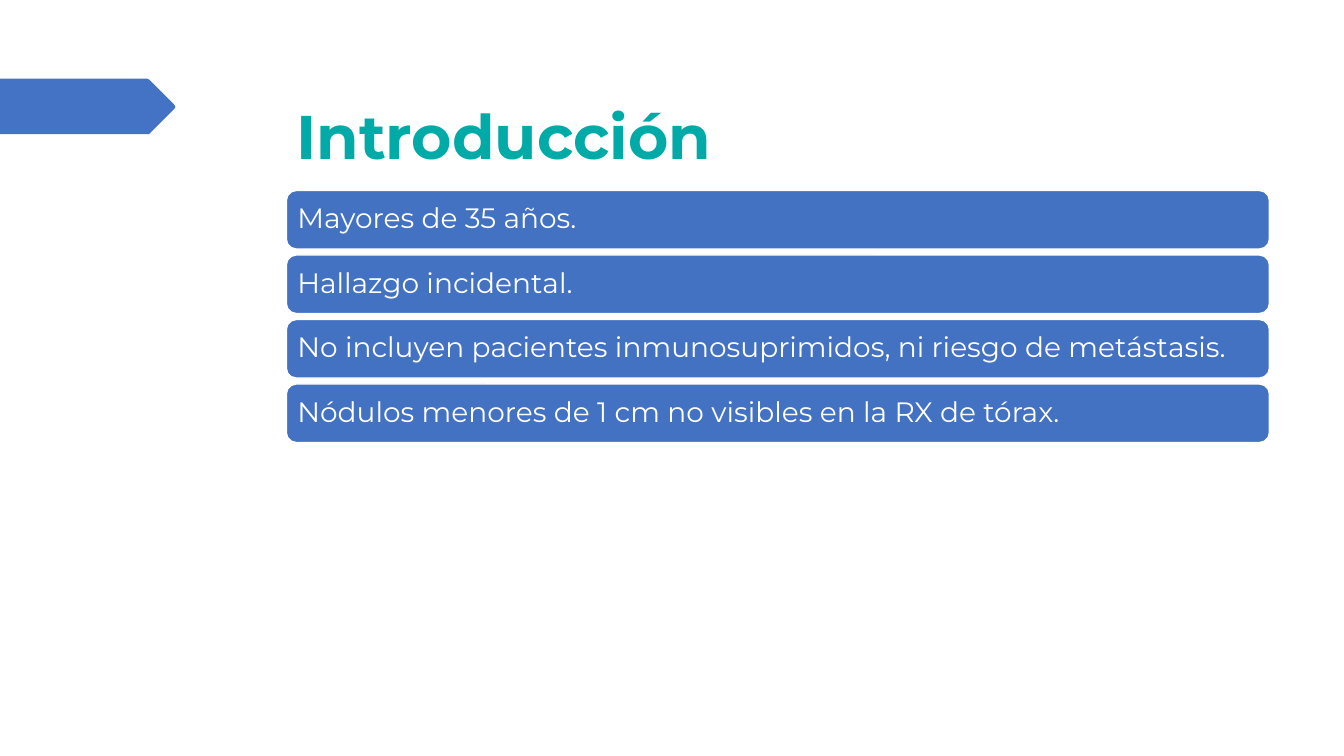
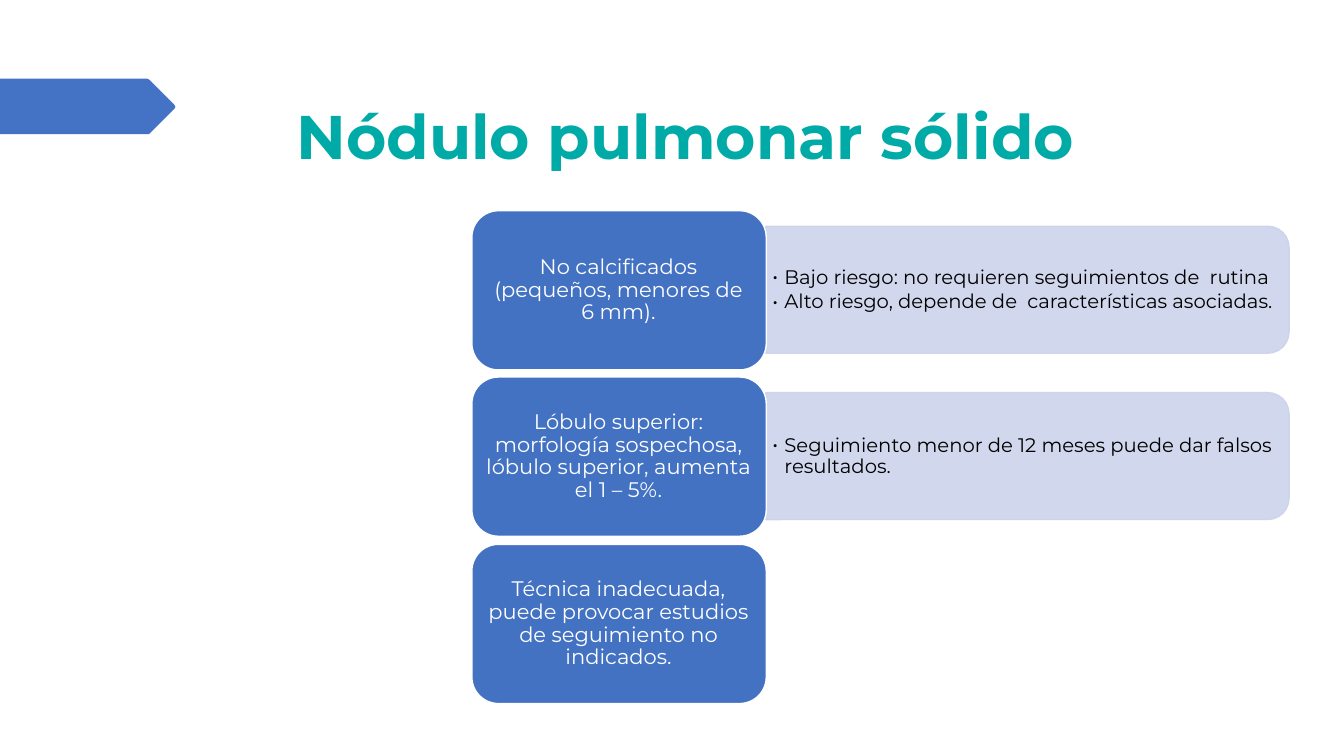
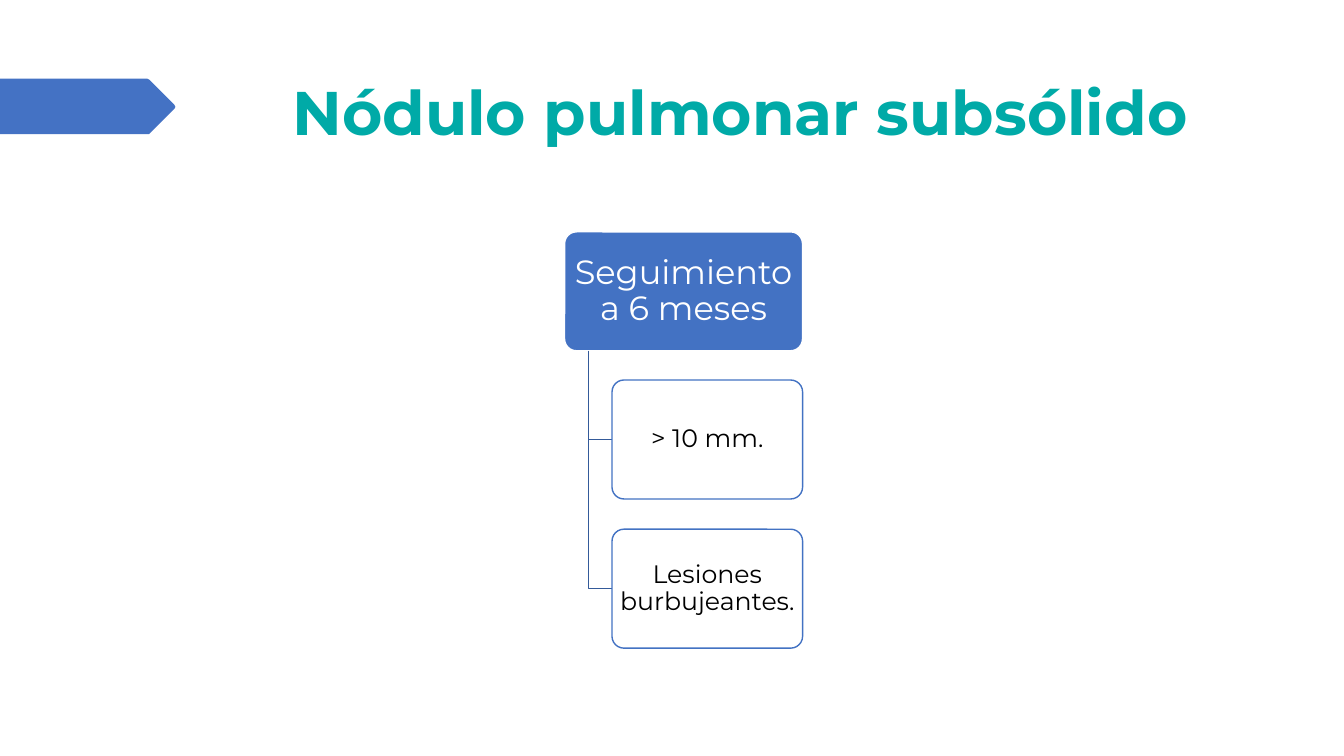
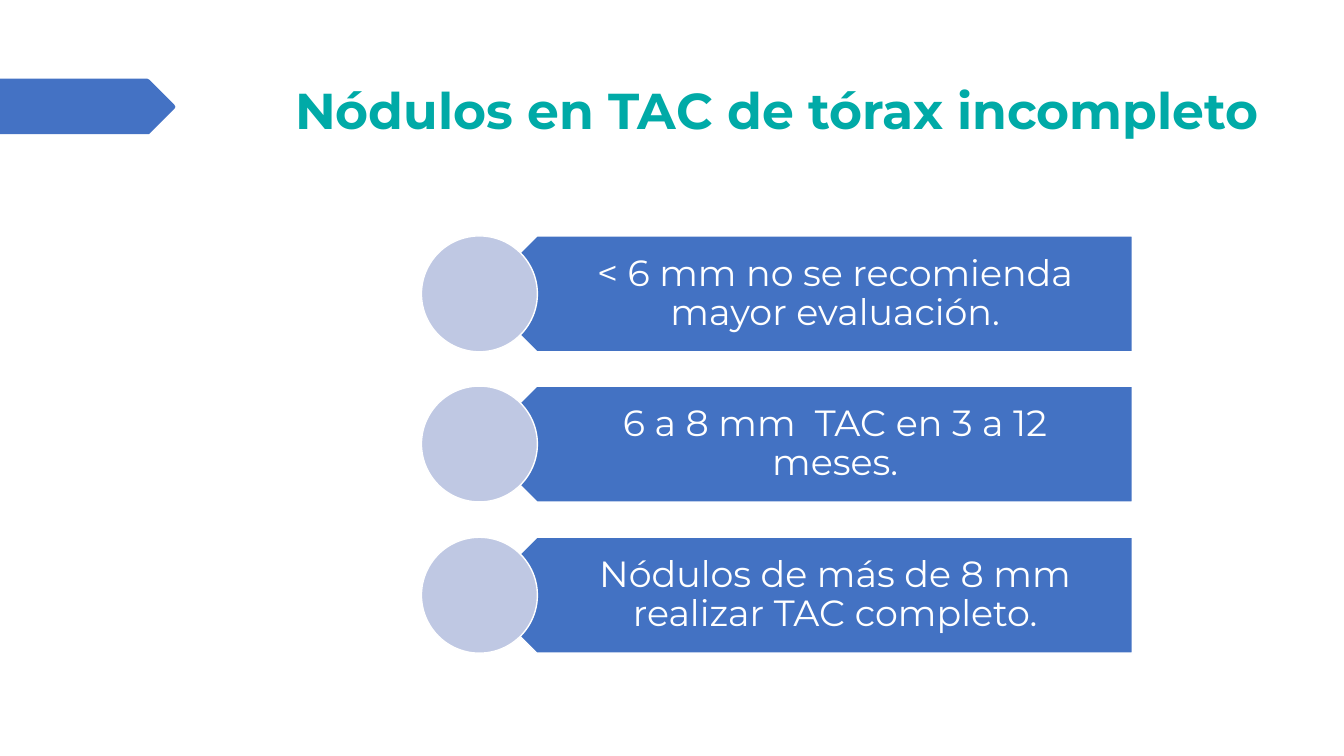
"""Build a four-slide deck on the follow-up of pulmonary nodules."""
from lxml.etree import SubElement
from pptx import Presentation
from pptx.dml.color import RGBColor
from pptx.enum.shapes import MSO_SHAPE
from pptx.enum.text import MSO_ANCHOR, PP_ALIGN
from pptx.oxml.ns import qn
from pptx.util import Pt

PX = 9144
FONT = "Montserrat"
COLORS = {
    "band": "4472C4", "blue": "4372C3", "pale": "CCD3EA", "disc": "BFC8E3",
    "branch": "345A99", "title": "00AAA7", "white": "FFFFFF", "black": "000000",
}
BAND = [(0, 78), (146, 78), (148, 79), (173, 104), (174, 106),
        (173, 108), (148, 133), (0, 133)]

CRITERIA = [
    "Mayores de 35 años.",
    "Hallazgo incidental.",
    "No incluyen pacientes inmunosuprimidos, ni riesgo de metástasis.",
    "Nódulos menores de 1 cm no visibles en la RX de tórax.",
]
SOLID_ROWS = [
    ("No calcificados (pequeños, menores de 6 mm).",
     ["Bajo riesgo: no requieren seguimientos de  rutina",
      "Alto riesgo, depende de  características asociadas."]),
    ("Lóbulo superior: morfología sospechosa, lóbulo superior, aumenta el 1 – 5%.",
     ["Seguimiento menor de 12 meses puede dar falsos resultados."]),
    ("Técnica inadecuada, puede provocar estudios de seguimiento no indicados.", []),
]
FOLLOW_UP = "Seguimiento a 6 meses"
FOLLOW_UP_CASES = ["> 10 mm.", "Lesiones burbujeantes."]
SIZE_RULES = [
    "< 6 mm no se recomienda mayor evaluación.",
    "6 a 8 mm  TAC en 3 a 12 meses.",
    "Nódulos de más de 8 mm realizar TAC completo.",
]


def color(name):
    return RGBColor.from_string(COLORS[name])


def spread(first, last, items):
    """Pair each item with an evenly spaced top from first to last."""
    return [(first + (last - first) * index // (len(items) - 1), item)
            for index, item in enumerate(items)]


def write(box, lines, size, ink="white", insets=(10, 5, 10, 5),
          align=PP_ALIGN.LEFT, bold=False, bullets=False):
    """Fill a shape or text box with evenly styled paragraphs."""
    frame = box.text_frame
    frame.word_wrap = True
    frame.vertical_anchor = MSO_ANCHOR.MIDDLE
    (frame.margin_left, frame.margin_top,
     frame.margin_right, frame.margin_bottom) = [inset * PX for inset in insets]
    frame.text = "\n".join(lines)
    for index, para in enumerate(frame.paragraphs):
        para.alignment = align
        para.line_spacing = 0.9
        if index:
            para.space_before = Pt(2.1)
        if bullets:
            add_bullet(para, ink)
        for span in para.runs:
            span.font.name = FONT
            span.font.size = Pt(size)
            span.font.bold = bold
            span.font.color.rgb = color(ink)


def add_bullet(para, ink):
    properties = para._p.get_or_add_pPr()
    properties.set("marL", str(12 * PX))
    properties.set("indent", str(-12 * PX))
    tint = SubElement(properties, qn("a:buClr"))
    SubElement(tint, qn("a:srgbClr")).set("val", COLORS[ink])
    SubElement(properties, qn("a:buFont")).set("typeface", FONT)
    SubElement(properties, qn("a:buChar")).set("char", "•")


def add_text(page, area, lines, size, **style):
    box = page.shapes.add_textbox(*[length * PX for length in area])
    write(box, lines, size, **style)


def add_block(page, kind, area, fill="blue", line="white", adjust=()):
    shape = page.shapes.add_shape(kind, *[length * PX for length in area])
    shape.shadow.inherit = False
    shape.fill.solid()
    shape.fill.fore_color.rgb = color(fill)
    shape.line.color.rgb = color(line)
    shape.line.width = Pt(1)
    for index, value in enumerate(adjust):
        shape.adjustments[index] = value
    return shape


def add_outline(page, points, close):
    builder = page.shapes.build_freeform(*points[0], scale=PX)
    builder.add_line_segments(points[1:], close=close)
    outline = builder.convert_to_shape()
    outline.shadow.inherit = False
    return outline


def add_page(deck, title, left=284, top=68, width=975, size=44):
    """Add a blank slide with the side band and its title."""
    page = deck.slides.add_slide(deck.slide_layouts[6])
    band = add_outline(page, BAND, close=True)
    band.fill.solid()
    band.fill.fore_color.rgb = color("band")
    band.line.fill.background()
    add_text(page, (left, top, width, 140), [title], size, ink="title", bold=True)
    return page


def build_introduction(deck):
    page = add_page(deck, "Introducción")
    for top, criterion in spread(189, 381, CRITERIA):
        bar = add_block(page, MSO_SHAPE.ROUNDED_RECTANGLE, (284, top, 975, 58),
                        adjust=[0.167])
        write(bar, [criterion], 20, insets=(8, 8, 8, 8))


def build_solid(deck):
    page = add_page(deck, "Nódulo pulmonar sólido")
    left, width, height = 468, 292, 158
    panel_width, panel_height = 519, 126
    panel_left = left + width
    for top, (finding, details) in spread(209, 540, SOLID_ROWS):
        middle = top + height // 2
        if details:
            area = (panel_left + (panel_width - panel_height) // 2,
                    middle - panel_width // 2 - 1, panel_height, panel_width)
            panel = add_block(page, MSO_SHAPE.ROUND_2_SAME_RECTANGLE, area,
                              "pale", "pale", [0.167, 0])
            panel.rotation = 90
            for tint in panel._element.spPr.iter(qn("a:srgbClr")):
                SubElement(tint, qn("a:alpha")).set("val", "90000")
            add_text(page, (panel_left, middle - 57, 513, 114), details, 14,
                     ink="black", insets=(6, 3, 6, 3), bullets=True)
        card = add_block(page, MSO_SHAPE.ROUNDED_RECTANGLE,
                         (left, top, width, height), adjust=[0.167])
        write(card, [finding], 15, insets=(6, 3, 7, 3), align=PP_ALIGN.CENTER)


def build_subsolid(deck):
    page = add_page(deck, "Nódulo pulmonar subsólido", left=280, top=45)
    trunk, child_left, parent_top, height = 584, 607, 230, 118
    parent = add_block(page, MSO_SHAPE.ROUNDED_RECTANGLE,
                       (560, parent_top, 236, height), adjust=[0.1])
    write(parent, [FOLLOW_UP], 24, insets=(5, 3, 5, 3), align=PP_ALIGN.CENTER)
    for top, case in spread(377, 525, FOLLOW_UP_CASES):
        middle = top + height // 2
        branch = add_outline(page, [(trunk, parent_top + height), (trunk, middle),
                                    (child_left, middle)], close=False)
        branch.fill.background()
        branch.line.color.rgb = color("branch")
        branch.line.width = Pt(1)
        child = add_block(page, MSO_SHAPE.ROUNDED_RECTANGLE,
                          (child_left, top, 189, height), "white", "blue", [0.1])
        write(child, [case], 18, ink="black", insets=(4, 2, 4, 2),
              align=PP_ALIGN.CENTER)


def build_incomplete(deck):
    page = add_page(deck, "Nódulos en TAC de tórax incompleto", left=283, top=42,
                    width=1050, size=36)
    height = 115
    for top, rule in spread(234, 533, SIZE_RULES):
        plate = add_block(page, MSO_SHAPE.PENTAGON, (475, top, 648, height),
                          adjust=[0.5])
        plate.rotation = 180
        add_text(page, (503, top, 620, height), [rule], 26,
                 insets=(51, 11, 20, 11), align=PP_ALIGN.CENTER)
        add_block(page, MSO_SHAPE.OVAL, (418, top, height, height), "disc")


def main():
    deck = Presentation()
    deck.slide_width, deck.slide_height = 1333 * PX, 750 * PX
    build_introduction(deck)
    build_solid(deck)
    build_subsolid(deck)
    build_incomplete(deck)
    deck.save("out.pptx")


if __name__ == "__main__":
    main()
